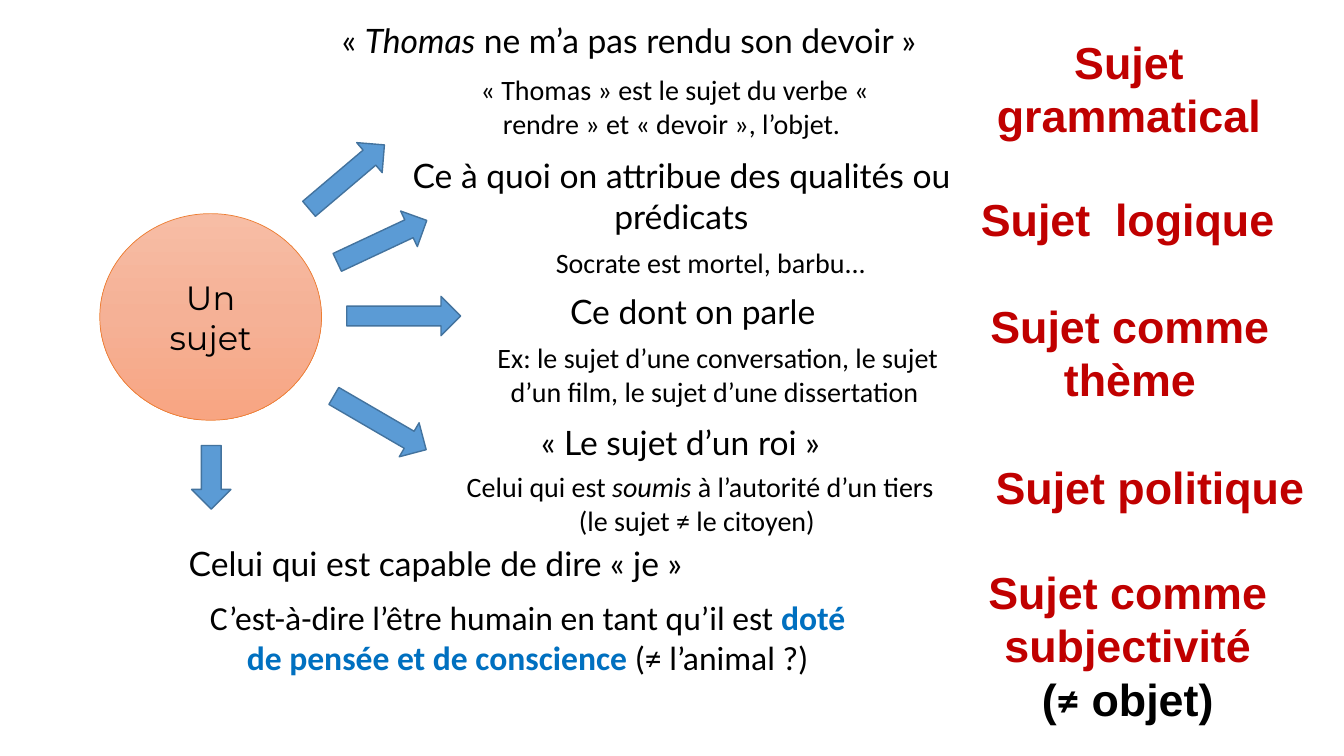
from copy import deepcopy
from dataclasses import dataclass

from pptx import Presentation
from pptx import util as u
from pptx.dml.color import RGBColor
from pptx.enum import shapes, text
from pptx.oxml.ns import qn


@dataclass(frozen=True)
class Theme:
    black: str = "000000"
    red: str = "C00000"
    blue: str = "0070C0"
    arrow: str = "5B9BD5"
    arrow_line: str = "43739E"
    circle: tuple = ("F7BDA5", "F5B196", "F8A582")
    circle_line: str = "ED7D31"
    head: float = 24
    note: float = 20
    label: float = 32


T = Theme()


@dataclass(frozen=True)
class Run:
    text: str
    italic: bool = False
    bold: bool = False
    color: str = T.black
    font: str = ""


@dataclass(frozen=True)
class Box:
    left: float
    top: float
    width: float
    height: float
    paragraphs: list[list[Run]]


@dataclass(frozen=True)
class Arrow:
    left: float
    top: float
    width: float
    angle: float


def rgb(value: str) -> RGBColor:
    return RGBColor.from_string(value)


def write(tf, paragraphs: list[list[Run]], *, font: str, size: float) -> None:
    """Fill a text frame with centred paragraphs."""
    tf.word_wrap = True
    for i, runs in enumerate(paragraphs):
        p = tf.add_paragraph() if i else tf.paragraphs[0]
        p.alignment = text.PP_ALIGN.CENTER
        for run in runs:
            r = p.add_run()
            r.text = run.text
            r.font.name = run.font or font
            r.font.size = u.Pt(size)
            r.font.bold, r.font.italic = run.bold, run.italic
            r.font.color.rgb = rgb(run.color)


def add_text(s, box: Box, *, font: str, size: float) -> None:
    sp = s.shapes.add_textbox(*map(u.Pt, (box.left, box.top, box.width, box.height)))
    write(sp.text_frame, box.paragraphs, font=font, size=size)
    sp.text_frame.auto_size = text.MSO_AUTO_SIZE.SHAPE_TO_FIT_TEXT


def add_arrow(s, arrow: Arrow) -> None:
    sp = s.shapes.add_shape(shapes.MSO_SHAPE.RIGHT_ARROW,
                            *map(u.Pt, (arrow.left, arrow.top, arrow.width, 28.1)))
    sp.rotation = arrow.angle
    sp.shadow.inherit = False
    sp.fill.solid()
    sp.fill.fore_color.rgb = rgb(T.arrow)
    sp.line.color.rgb = rgb(T.arrow_line)
    sp.line.width = u.Pt(1)


def add_circle(s) -> None:
    sp = s.shapes.add_shape(shapes.MSO_SHAPE.OVAL, *map(u.Pt, (71.3, 152.6, 158.4, 147.6)))
    sp.shadow.inherit = False
    sp.fill.gradient()
    sp.fill.gradient_angle = 270
    # The default gradient has two stops; a third goes in between
    first = next(sp._element.spPr.iter(qn("a:gs")))
    first.addnext(deepcopy(first))
    for i, (stop, color) in enumerate(zip(sp.fill.gradient_stops, T.circle)):
        stop.position = i / 2
        stop.color.rgb = rgb(color)
    sp.line.color.rgb = rgb(T.circle_line)
    sp.line.width = u.Pt(0.5)
    sp.text_frame.vertical_anchor = text.MSO_ANCHOR.MIDDLE
    write(sp.text_frame, [[Run("Un sujet")]], font="Montserrat", size=T.head)


ARROWS = [
    Arrow(212.4, 112.3, 70.6, 319.7),
    Arrow(237.6, 158.4, 70.6, 334.9),
    Arrow(247.7, 211.7, 81.4, 0),
    Arrow(233.3, 288, 76.3, 30.2),
    Arrow(128.2, 326.9, 45.4, 90),
]

HEADS = [
    Box(211, 10.8, 476.6, 36, [[Run("« "), Run("Thomas", italic=True),
                                Run(" ne m’a pas rendu son devoir »")]]),
    Box(283.7, 107.3, 406.1, 65.5, [[Run("Ce à quoi on attribue des qualités ou prédicats")]]),
    Box(351.4, 204.5, 293, 36, [[Run("Ce dont on parle ")]]),
    Box(344.2, 298.1, 283.7, 36, [[Run("« Le sujet d’un roi »")]]),
    Box(6.5, 384.5, 609.1, 36, [[Run("Celui qui est capable de dire « je »")]]),
]

NOTES = [
    Box(317.5, 48.2, 329, 55.4,
        [[Run("« Thomas » est le sujet du verbe « rendre » et « devoir », l’objet. ")]]),
    Box(345.6, 172.1, 329, 31.7, [[Run("Socrate est mortel, barbu... ")]]),
    Box(340.6, 239.8, 344.2, 55.4,
        [[Run("Ex: le sujet d’une conversation, le sujet d’un film, le sujet d’une dissertation ")]]),
    Box(319, 331.9, 362.2, 55.4,
        [[Run("Celui qui est "), Run("soumis", italic=True),
          Run(" à l’autorité d’un tiers (le sujet ≠ le citoyen) ")]]),
]

CONCLUSION = Box(136.8, 422.6, 480.2, 65.5, [[
    Run("C’est-à-dire l’être humain en tant qu’il est "),
    Run("doté de pensée et de conscience ", bold=True, color=T.blue),
    Run("(≠ l’animal ?)")]])


def label(title: str) -> list[Run]:
    return [Run(title, bold=True, color=T.red)]


LABELS = [
    Box(668.2, 20.9, 276.5, 85, [label("Sujet grammatical")]),
    Box(667.4, 133.2, 276.5, 46.1, [label("Sujet  logique")]),
    Box(668.9, 209.5, 276.5, 85, [label("Sujet comme thème")]),
    Box(683.3, 324.7, 276.5, 46.1, [label("Sujet politique")]),
    Box(667.4, 399.6, 276.5, 123.8, [
        label("Sujet comme subjectivité"),
        [Run("(", bold=True), Run("≠", bold=True, font="Calibri"), Run(" objet)", bold=True)]]),
]


def main() -> None:
    prs = Presentation()
    prs.slide_width, prs.slide_height = u.Pt(960), u.Pt(540)
    s = prs.slides.add_slide(prs.slide_layouts[6])

    # Central notion and its arrows
    add_circle(s)
    for arrow in ARROWS:
        add_arrow(s, arrow)

    # Meanings, explanations and names of each kind of subject
    for boxes, font, size in ((HEADS, "Lato", T.head),
                              (NOTES, "Calibri", T.note),
                              ([CONCLUSION], "Calibri", T.head),
                              (LABELS, "Arial", T.label)):
        for box in boxes:
            add_text(s, box, font=font, size=size)

    prs.save("out.pptx")


if __name__ == "__main__":
    main()
